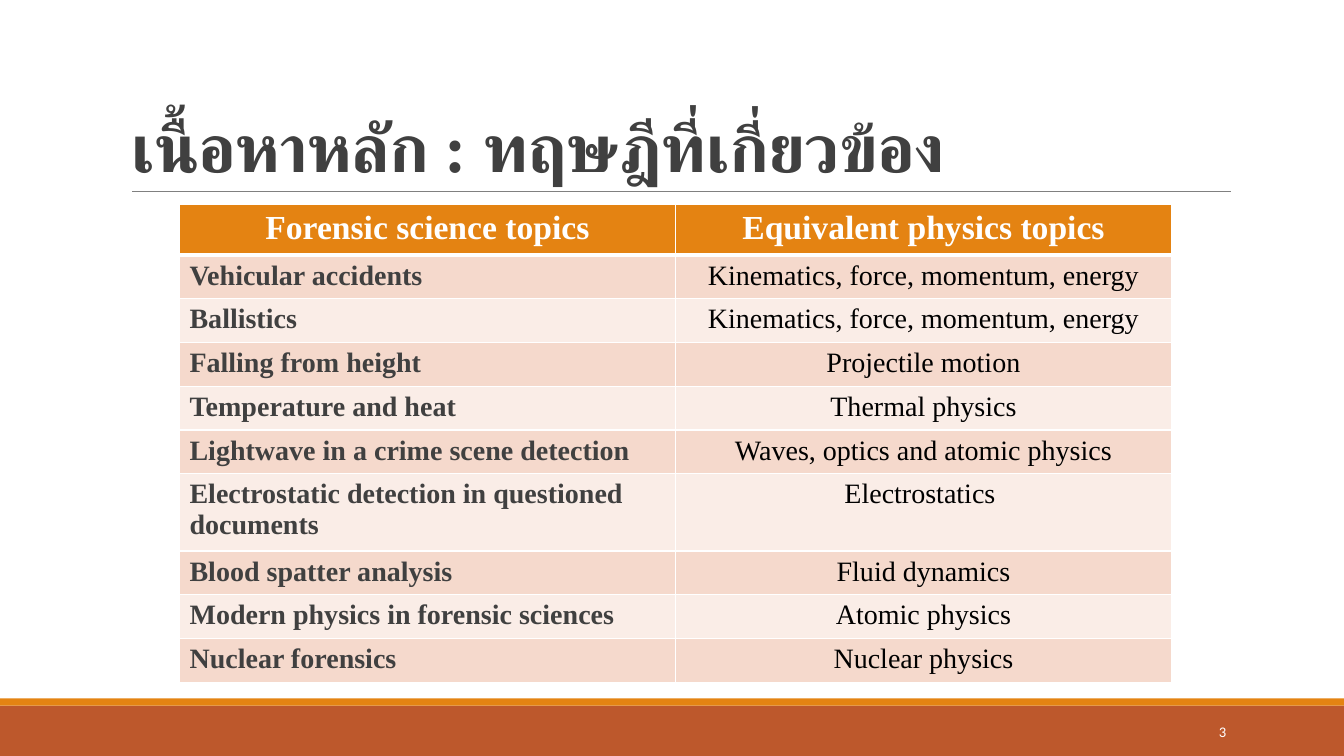
from lxml import etree
from pptx import Presentation
from pptx.dml.color import RGBColor
from pptx.enum import shapes, text
from pptx.oxml import ns
from pptx.util import Inches, Pt

COLORS = {
    "white": "FFFFFF", "black": "000000", "text": "404040", "rule": "808080",
    "orange": "E48312", "rust": "BD582C", "band": "F5D9CC", "pale": "FAEDE7",
}
SERIF = "Times New Roman"
HEADER = ("Forensic science topics", "Equivalent physics topics")
TOPICS = [
    ("Vehicular accidents", "Kinematics, force, momentum, energy"),
    ("Ballistics", "Kinematics, force, momentum, energy"),
    ("Falling from height", "Projectile motion"),
    ("Temperature and heat", "Thermal physics"),
    ("Lightwave in a crime scene detection", "Waves, optics and atomic physics"),
    ("Electrostatic detection in questioned documents", "Electrostatics "),
    ("Blood spatter analysis", "Fluid dynamics"),
    ("Modern physics in forensic sciences", "Atomic physics"),
    ("Nuclear forensics", "Nuclear physics"),
]


def color(name):
    return RGBColor.from_string(COLORS[name])


def box(left, top, width, height):
    return [Inches(value) for value in (left, top, width, height)]


def style(paragraph, font_name, size, color_name, bold=False, align=None):
    paragraph.alignment = align
    font = paragraph.font
    font.name, font.size, font.bold = font_name, Pt(size), bold
    font.color.rgb = color(color_name)


def add_bar(slide, top, height, color_name):
    bar = slide.shapes.add_shape(
        shapes.MSO_SHAPE.RECTANGLE, *box(0, top, 13.33, height))
    bar.shadow.inherit = False
    bar.fill.solid()
    bar.fill.fore_color.rgb = color(color_name)
    bar.line.fill.background()


def add_rule(slide, left, right, top):
    rule = slide.shapes.add_connector(
        shapes.MSO_CONNECTOR.STRAIGHT, *box(left, top, right, top))
    rule.line.color.rgb = color("rule")
    rule.line.width = Pt(0.5)
    etree.SubElement(rule._element.spPr, ns.qn("a:effectLst"))


def set_title(slide, wording):
    title = slide.shapes.title
    title.left, title.top, title.width, title.height = box(1.2, 0.31, 11, 1.59)
    frame = title.text_frame
    frame.text = wording
    frame.auto_size = text.MSO_AUTO_SIZE.NONE
    frame.vertical_anchor = text.MSO_ANCHOR.BOTTOM
    paragraph = frame.paragraphs[0]
    paragraph.line_spacing = 0.85
    style(paragraph, SERIF, 48, "text", True, text.PP_ALIGN.LEFT)
    # Thai letters take the complex-script font
    properties = paragraph.runs[0]._r.get_or_add_rPr()
    properties.set("spc", "-50")
    etree.SubElement(properties, ns.qn("a:cs"), typeface=SERIF)


def add_slide_number(slide, number):
    frame = slide.shapes.add_textbox(*box(10.83, 7.06, 1.43, 0.4)).text_frame
    frame.word_wrap = True
    frame.vertical_anchor = text.MSO_ANCHOR.MIDDLE
    frame.text = number
    style(frame.paragraphs[0], "Calibri", 10.5, "white", align=text.PP_ALIGN.RIGHT)


def set_borders(cell, bottom):
    properties = cell._tc.get_or_add_tcPr()
    widths = {"lnL": 1, "lnR": 1, "lnT": 1, "lnB": bottom}
    for index, (side, width) in enumerate(widths.items()):
        line = etree.Element(ns.qn(f"a:{side}"), w=str(Pt(width)))
        fill = etree.SubElement(line, ns.qn("a:solidFill"))
        etree.SubElement(fill, ns.qn("a:srgbClr"), val=COLORS["white"])
        properties.insert(index, line)


def fill_cell(cell, wording, fill_name, size, color_name, bold, align, bottom=1):
    cell.text = wording
    cell.fill.solid()
    cell.fill.fore_color.rgb = color(fill_name)
    style(cell.text_frame.paragraphs[0], SERIF, size, color_name, bold, align)
    set_borders(cell, bottom)


def add_topic_table(slide):
    row_count = len(TOPICS) + 1
    table = slide.shapes.add_table(
        row_count, 2, *box(1.78, 2.03, 9.84, 0.41 * row_count)).table
    left, center = text.PP_ALIGN.LEFT, text.PP_ALIGN.CENTER
    for column, heading in enumerate(HEADER):
        fill_cell(table.cell(0, column), heading, "orange", 24, "white", True, center, 3)
    for row, (forensic, physics) in enumerate(TOPICS, 1):
        fill_name = "band" if row % 2 else "pale"
        fill_cell(table.cell(row, 0), forensic, fill_name, 20, "text", True, left)
        fill_cell(table.cell(row, 1), physics, fill_name, 20, "black", False, center)


def main():
    presentation = Presentation()
    presentation.slide_width, presentation.slide_height = Inches(13.33), Inches(7.5)
    slide = presentation.slides.add_slide(presentation.slide_layouts[5])

    # Footer bars and title rule
    add_bar(slide, 7, 0.5, "rust")
    add_bar(slide, 6.93, 0.07, "orange")
    add_rule(slide, 1.31, 12.21, 1.9)

    # Content
    set_title(slide, "เนื้อหาหลัก : ทฤษฎีที่เกี่ยวข้อง")
    add_slide_number(slide, "3")
    add_topic_table(slide)

    presentation.save("out.pptx")


if __name__ == "__main__":
    main()
